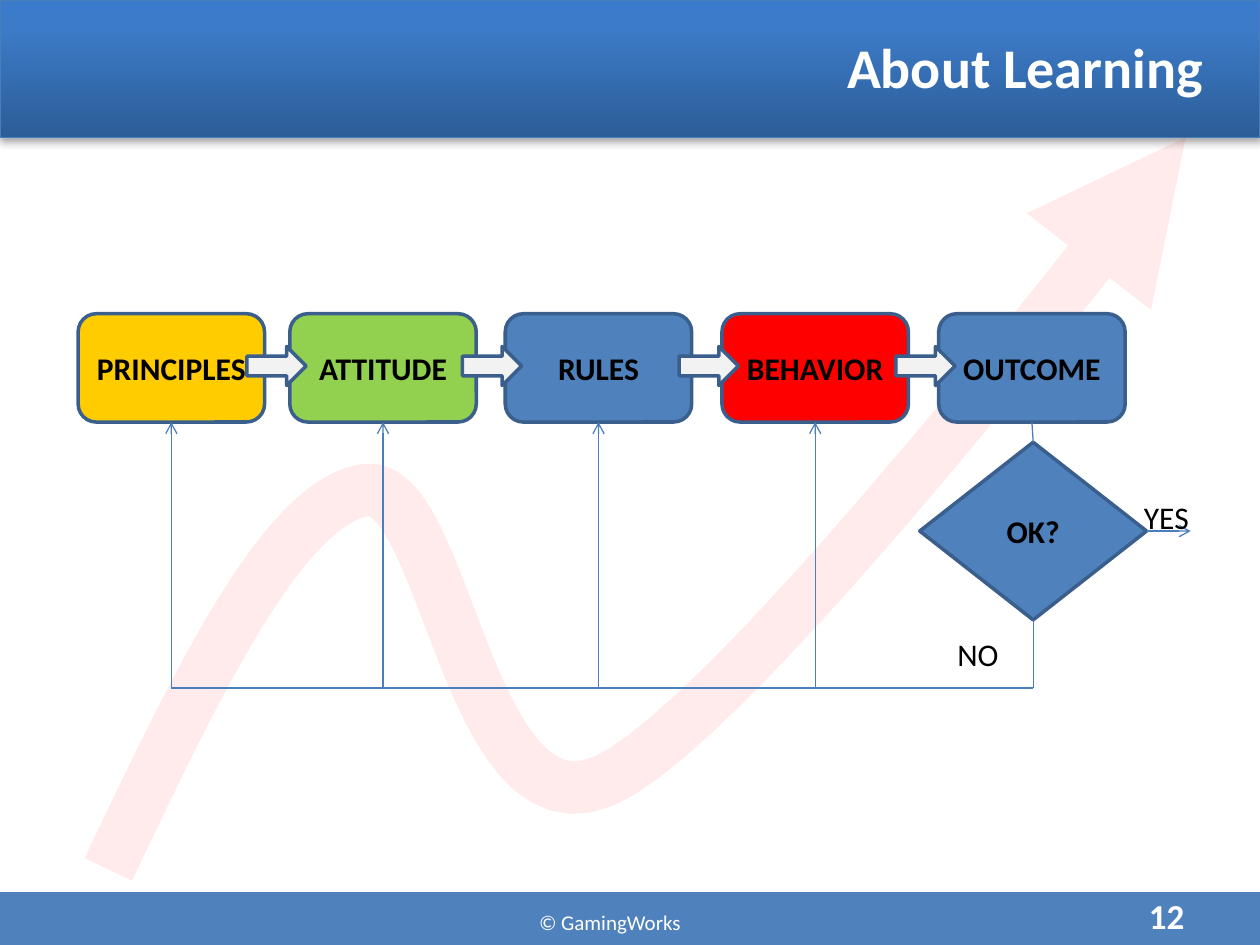
from dataclasses import dataclass
from itertools import pairwise

from lxml import etree
from pptx import Presentation
from pptx.dml.color import RGBColor
from pptx.enum.shapes import MSO_CONNECTOR, MSO_SHAPE
from pptx.enum.text import MSO_ANCHOR, PP_ALIGN
from pptx.oxml.ns import qn
from pptx.util import Inches, Pt

RECT, ROUNDED = MSO_SHAPE.RECTANGLE, MSO_SHAPE.ROUNDED_RECTANGLE
DIAMOND, ARROW = MSO_SHAPE.FLOWCHART_DECISION, MSO_SHAPE.RIGHT_ARROW
STRAIGHT = MSO_CONNECTOR.STRAIGHT
MIDDLE, TOP = MSO_ANCHOR.MIDDLE, MSO_ANCHOR.TOP
LEFT, CENTER, RIGHT = PP_ALIGN.LEFT, PP_ALIGN.CENTER, PP_ALIGN.RIGHT
SIDE_TOP, SIDE_BOTTOM, SIDE_RIGHT = 0, 2, 3


@dataclass(frozen=True)
class Theme:
    font: str = "Calibri"
    blue: str = "4F81BD"
    outline: str = "3A5F8C"
    wire: str = "4B7EBC"
    header_line: str = "4A7EBB"
    header_stops: tuple = ((0, "3A7CCB"), (20, "3C7BC7"), (100, "2C5D98"))
    arrow: str = "F2F2F2"
    red: str = "FF0000"
    green: str = "92D050"
    yellow: str = "FFCC00"
    black: str = "000000"
    white: str = "FFFFFF"
    title: int = 32
    number: int = 20
    body: int = 18
    footer: int = 12


@dataclass(frozen=True)
class Step:
    label: str
    left: float
    fill: str


T = Theme()
STEPS = [
    Step("PRINCIPLES", 0.62, T.yellow),
    Step("ATTITUDE", 2.3, T.green),
    Step("RULES", 4.01, T.blue),
    Step("BEHAVIOR", 5.73, T.red),
    Step("OUTCOME", 7.45, T.blue),
]
STEP_TOP, STEP_W, STEP_H = 2.49, 1.48, 0.86
RETURN_Y = Inches(5.46)
CURVE_START = (0.86, 6.9)
CURVE = [
    ((1.55, 5.45), (2.23, 4.01), (2.89, 3.89)),
    ((3.54, 3.77), (3.7, 6.67), (4.79, 6.2)),
    ((5.88, 5.74), (9.41, 1.09), (9.41, 1.09)),
]
CURVE_PARTS = 24


def rgb(color: str) -> RGBColor:
    return RGBColor.from_string(color)


def child(parent, tag: str, **attrs):
    return etree.SubElement(parent, qn(tag), {k: str(v) for k, v in attrs.items()})


def write(s, text: str, size: int, color: str, bold=False, align=LEFT, anchor=TOP):
    tf = s.text_frame
    tf.vertical_anchor = anchor
    p = tf.paragraphs[0]
    p.alignment = align
    r = p.add_run()
    r.text = text
    r.font.name, r.font.size, r.font.bold = T.font, Pt(size), bold
    r.font.color.rgb = rgb(color)


def add_text(sp, box, text: str, size: int, color: str, bold=False, align=LEFT, wrap=True):
    s = sp.add_textbox(*map(Inches, box))
    s.text_frame.word_wrap = wrap
    write(s, text, size, color, bold, align)


def add_block(sp, kind, box, fill: str, line: str | None = T.outline, width=2.0):
    s = sp.add_shape(kind, *map(Inches, box))
    s.shadow.inherit = False
    s.fill.solid()
    s.fill.fore_color.rgb = rgb(fill)
    if line:
        s.line.color.rgb = rgb(line)
        s.line.width = Pt(width)
    else:
        s.line.fill.background()
    return s


def add_node(sp, kind, box, fill: str, label: str):
    s = add_block(sp, kind, box, fill)
    write(s, label, T.body, T.black, True, CENTER, MIDDLE)
    return s


def add_wire(sp, start, end, head=False):
    s = sp.add_connector(STRAIGHT, *start, *end)
    s.line.color.rgb = rgb(T.wire)
    s.line.width = Pt(0.75)
    if head:
        child(s.line._get_or_add_ln(), "a:tailEnd", type="arrow")
    child(s._element.spPr, "a:effectLst")
    return s


def middle(s) -> int:
    return s.left + s.width // 2


def add_header(sp):
    s = add_block(sp, RECT, (0, 0, 10, 1.09), T.blue, T.header_line, 0.75)
    s.fill.gradient()
    s.fill.gradient_angle = 270
    stops = s._element.spPr.find(qn("a:gradFill")).find(qn("a:gsLst"))
    stops.clear()
    for position, color in T.header_stops:
        stop = child(stops, "a:gs", pos=position * 1000)
        child(stop, "a:srgbClr", val=color)
    effects = s._element.spPr.find(qn("a:effectLst"))
    shadow = child(effects, "a:outerShdw", blurRad=Pt(5), dist=Pt(1.8),
                   dir=5400000, rotWithShape=0)
    child(child(shadow, "a:srgbClr", val=T.black), "a:alpha", val=35000)


def curve_points():
    start = CURVE_START
    for a, b, end in CURVE:
        for i in range(1, CURVE_PARTS + 1):
            t = i / CURVE_PARTS
            u = 1 - t
            yield tuple(
                Inches(u**3 * p0 + 3 * u * u * t * p1 + 3 * u * t * t * p2 + t**3 * p3)
                for p0, p1, p2, p3 in zip(start, a, b, end)
            )
        start = end


def add_trend(sp):
    builder = sp.build_freeform(*map(Inches, CURVE_START))
    builder.add_line_segments(list(curve_points()), close=False)
    s = builder.convert_to_shape()
    s.shadow.inherit = False
    s.fill.background()
    s.line.color.rgb = rgb(T.red)
    s.line.width = Pt(30)
    ln = s.line._get_or_add_ln()
    child(ln.find(qn("a:solidFill"))[0], "a:alpha", val=8000)
    child(ln, "a:round")
    child(ln, "a:tailEnd", type="triangle")


def add_flow(sp):
    boxes = [
        add_node(sp, ROUNDED, (step.left, STEP_TOP, STEP_W, STEP_H), step.fill, step.label)
        for step in STEPS
    ]
    outcome = boxes[-1]
    check = add_node(sp, DIAMOND, (7.3, 3.51, 1.8, 1.41), T.blue, "OK?")

    link = add_wire(sp, (0, 0), (0, 0))
    link.begin_connect(outcome, SIDE_BOTTOM)
    link.end_connect(check, SIDE_TOP)
    yes = add_wire(sp, (0, 0), (Inches(9.45), check.top + check.height // 2), True)
    yes.begin_connect(check, SIDE_RIGHT)
    no = add_wire(sp, (0, 0), (middle(check), RETURN_Y))
    no.begin_connect(check, SIDE_BOTTOM)

    for source, target in pairwise([check, *boxes[-2::-1]]):
        corner = (middle(target), RETURN_Y)
        add_wire(sp, (middle(source), RETURN_Y), corner)
        add_wire(sp, corner, corner, True).end_connect(target, SIDE_BOTTOM)

    for step in STEPS[1:]:
        add_block(sp, ARROW, (step.left - 0.34, 2.75, 0.47, 0.31), T.arrow)
    add_text(sp, (8.98, 3.9, 0.57, 0.4), "YES", T.body, T.black, wrap=False)
    add_text(sp, (7.5, 4.99, 0.53, 0.4), "NO", T.body, T.black, wrap=False)


def main():
    prs = Presentation()
    prs.slide_width, prs.slide_height = Inches(10), Inches(7.5)
    sp = prs.slides.add_slide(prs.slide_layouts[6]).shapes
    add_header(sp)
    add_block(sp, RECT, (0, 7.08, 10, 0.42), T.blue, None)
    add_text(sp, (4.18, 7.17, 1.6, 0.3), "© GamingWorks", T.footer, T.white)
    add_trend(sp)
    add_text(sp, (2.09, 0.21, 7.56, 0.81), "About Learning", T.title, T.white, True, RIGHT)
    add_text(sp, (9.02, 7.05, 0.78, 0.4), "12", T.number, T.white, True)
    add_flow(sp)
    prs.save("out.pptx")


if __name__ == "__main__":
    main()
